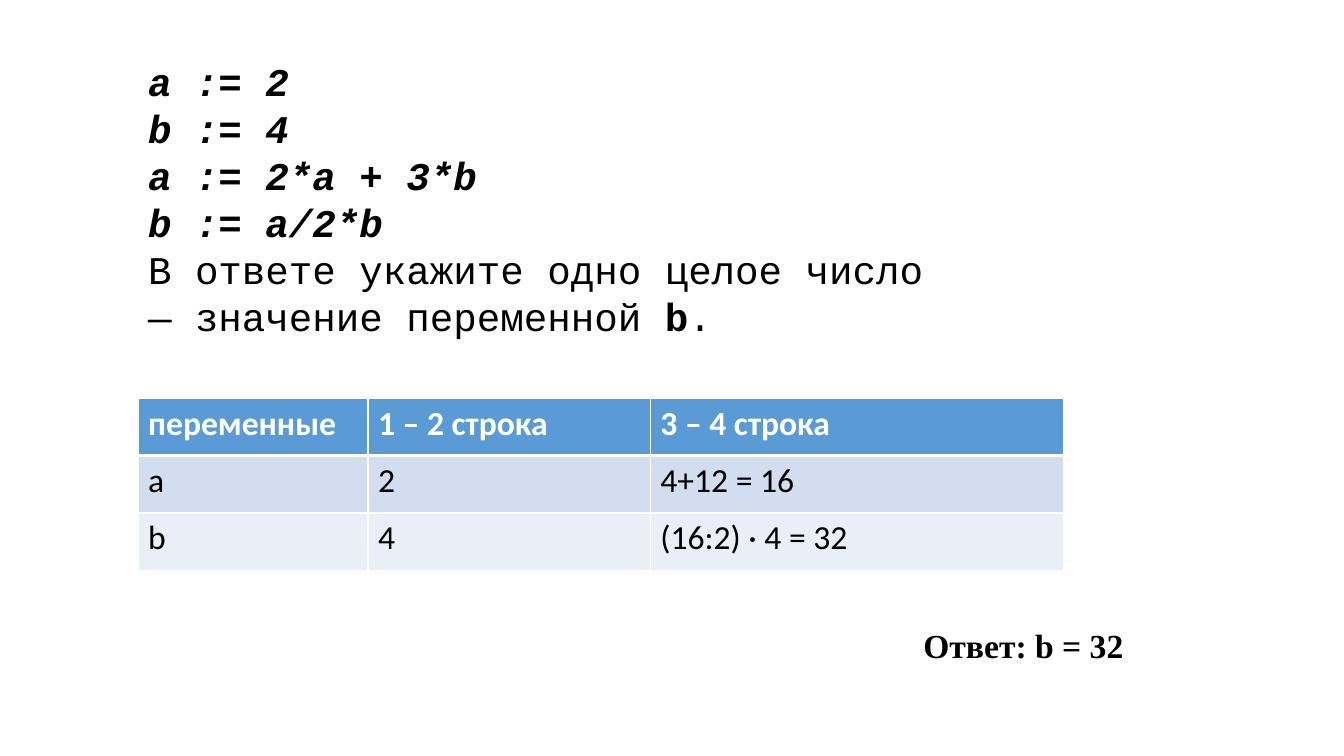
from dataclasses import dataclass

from lxml import etree
from pptx import Presentation
from pptx.dml.color import RGBColor
from pptx.enum.text import MSO_AUTO_SIZE
from pptx.oxml.ns import qn
from pptx.util import Inches, Pt

GROW = MSO_AUTO_SIZE.SHAPE_TO_FIT_TEXT
BLACK, WHITE = "000000", "FFFFFF"
LEFT = 1.37


@dataclass
class RowStyle:
    fill: str
    color: str
    bold: bool
    top: int
    bottom: int


HEADER = RowStyle("5B9BD5", WHITE, True, 1, 3)
FIRST_ROW = RowStyle("D2DEEF", BLACK, False, 3, 1)
SECOND_ROW = RowStyle("EAEFF7", BLACK, False, 1, 1)

PROGRAM = ["а := 2", "b := 4", "а := 2*а + 3*b", "b := a/2*b"]
QUESTION = [
    ("В ответе укажите одно целое число — значение переменной ", False),
    ("b", True),
    (".", False),
]
COLUMN_WIDTHS = [2.28, 2.8, 4.1]
ROW_HEIGHT = 0.57
TRACE = [
    (HEADER, ["переменные", "1 – 2 строка", "3 – 4 строка"]),
    (FIRST_ROW, ["a", "2", "4+12 = 16"]),
    (SECOND_ROW, ["b", "4", "(16:2) · 4 = 32"]),
]


def rgb(color: str) -> RGBColor:
    return RGBColor.from_string(color)


def set_font(font, name: str, size: int, color: str = BLACK) -> None:
    font.name = name
    font.size = Pt(size)
    font.color.rgb = rgb(color)


def add_text_frame(slide, left, top, width, height, wrap: bool):
    box = slide.shapes.add_textbox(*map(Inches, (left, top, width, height)))
    frame = box.text_frame
    frame.word_wrap = wrap
    frame.auto_size = GROW
    return frame


def add_task(slide) -> None:
    frame = add_text_frame(slide, LEFT, 0.52, 8.28, 2.93, True)
    frame.text = "\n".join(PROGRAM)
    for statement in frame.paragraphs:
        statement.font.bold = statement.font.italic = True
    question = frame.add_paragraph()
    for words, bold in QUESTION:
        run = question.add_run()
        run.text = words
        run.font.bold = bold
    for paragraph in frame.paragraphs:
        set_font(paragraph.font, "Courier New", 28)


def set_borders(cell, style: RowStyle) -> None:
    """Draw white cell borders, placed before the fill as the schema requires."""
    properties = cell._tc.get_or_add_tcPr()
    widths = {"L": 1, "R": 1, "T": style.top, "B": style.bottom}
    for position, (side, width) in enumerate(widths.items()):
        border = etree.Element(qn(f"a:ln{side}"), w=str(Pt(width)))
        fill = etree.SubElement(border, qn("a:solidFill"))
        etree.SubElement(fill, qn("a:srgbClr"), val=WHITE)
        properties.insert(position, border)


def add_trace_table(slide) -> None:
    table = slide.shapes.add_table(
        len(TRACE), len(COLUMN_WIDTHS), Inches(LEFT), Inches(3.95),
        Inches(sum(COLUMN_WIDTHS)), Inches(ROW_HEIGHT * len(TRACE)),
    ).table
    for column, width in zip(table.columns, COLUMN_WIDTHS):
        column.width = Inches(width)
    for row, (style, values) in zip(table.rows, TRACE):
        row.height = Inches(ROW_HEIGHT)
        for cell, value in zip(row.cells, values):
            cell.text = value
            cell.fill.solid()
            cell.fill.fore_color.rgb = rgb(style.fill)
            font = cell.text_frame.paragraphs[0].font
            set_font(font, "Calibri", 24, style.color)
            font.bold = style.bold
            set_borders(cell, style)


def add_answer(slide) -> None:
    frame = add_text_frame(slide, 9.06, 6.15, 2.2, 0.5, False)
    frame.text = "Ответ: b = 32"
    font = frame.paragraphs[0].font
    set_font(font, "Times New Roman", 24)
    font.bold = True


def main() -> None:
    presentation = Presentation()
    presentation.slide_width = Inches(13.33)
    presentation.slide_height = Inches(7.5)
    slide = presentation.slides.add_slide(presentation.slide_layouts[6])
    add_task(slide)
    add_trace_table(slide)
    add_answer(slide)
    presentation.save("out.pptx")


if __name__ == "__main__":
    main()
